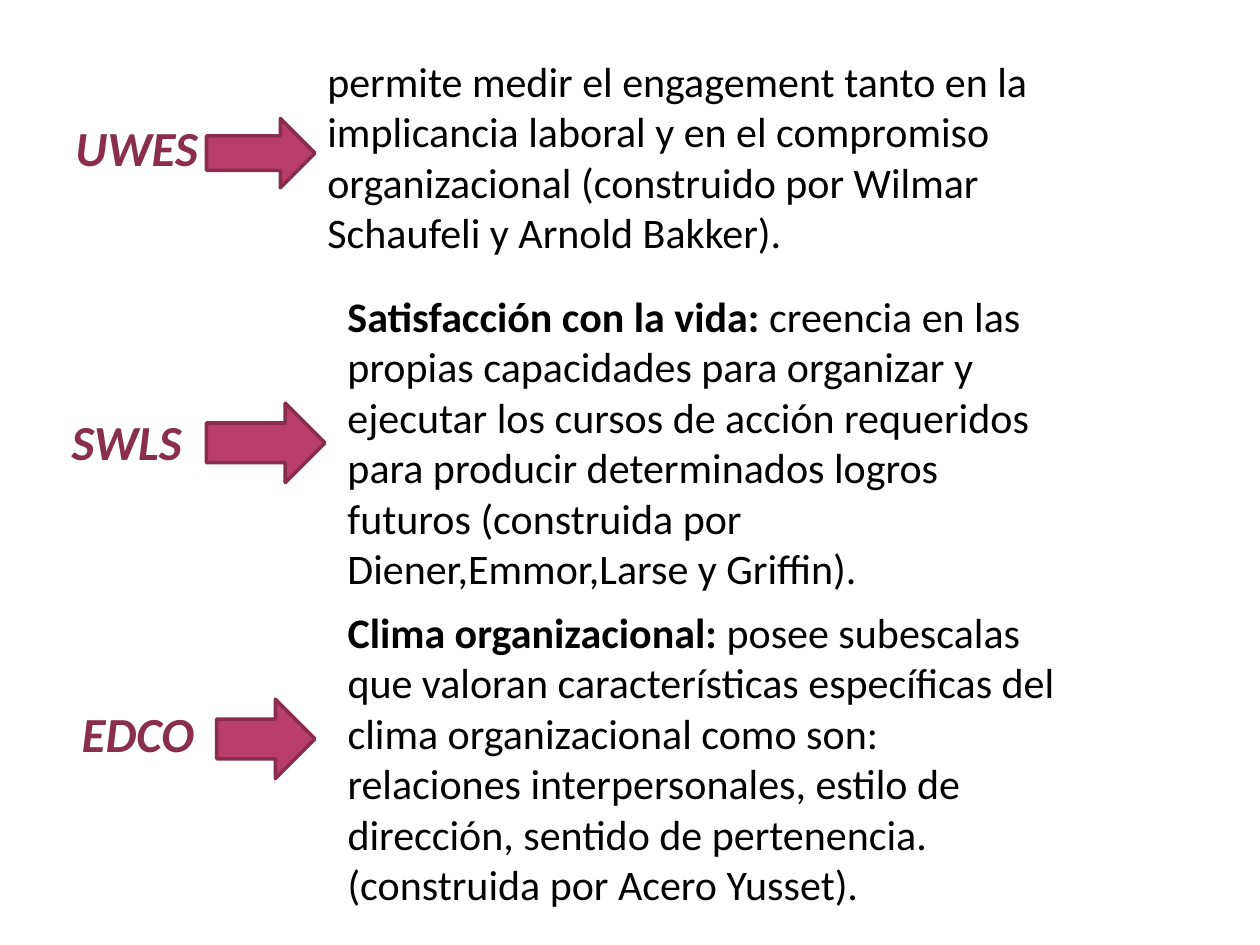
"""Build a slide that describes three measurement scales, each with a label and an arrow."""
from pptx import Presentation
from pptx.dml.color import RGBColor
from pptx.enum.shapes import MSO_SHAPE as SHAPE
from pptx.util import Pt

BLACK = RGBColor(0x00, 0x00, 0x00)
PLUM = RGBColor(0x8A, 0x2E, 0x4E)
ROSE = RGBColor(0xB8, 0x3D, 0x68)
EDGE = RGBColor(0x88, 0x2D, 0x4D)

SCALES = [
    ("UWES", (36, 63.4), (118, 67.7, 62, 39.6), (180, 28, 427.7, 167), "",
     "permite medir el engagement tanto en la implicancia laboral y en el "
     "compromiso organizacional (construido por Wilmar Schaufeli y Arnold Bakker)."),
    ("SWLS", (33.8, 231.5), (118, 230.4, 67.7, 45.4), (191.5, 162.4, 410.4, 182),
     "Satisfacción con la vida: ",
     "creencia en las propias capacidades para organizar y ejecutar los cursos de "
     "acción requeridos para producir determinados logros futuros (construida por "
     "Diener,Emmor,Larse y Griffin)."),
    ("EDCO", (39.6, 398.5), (123.8, 399.6, 56.2, 45.4), (191.5, 343, 422, 182),
     "Clima organizacional: ",
     "posee subescalas que valoran características específicas del clima "
     "organizacional como son: relaciones interpersonales, estilo de dirección, "
     "sentido de pertenencia. (construida por Acero Yusset)."),
]


class Deck:
    def __init__(self):
        self.prs = Presentation()
        self.prs.slide_width, self.prs.slide_height = Pt(720), Pt(540)
        self.s = self.prs.slides.add_slide(self.prs.slide_layouts[6])
        self.font = "Calibri"

    def paragraph(self, box, size, color):
        tf = self.s.shapes.add_textbox(*map(Pt, box)).text_frame
        tf.word_wrap = True
        p = tf.paragraphs[0]
        p.font.name, p.font.size = self.font, Pt(size)
        p.font.color.rgb = color
        return p

    def label(self, text, pos):
        p = self.paragraph((*pos, 96, 41.4), 28, PLUM)
        p.font.bold = p.font.italic = True
        p.add_run().text = text

    def arrow(self, box):
        sp = self.s.shapes.add_shape(SHAPE.RIGHT_ARROW, *map(Pt, box))
        sp.shadow.inherit = False
        sp.fill.solid()
        sp.fill.fore_color.rgb = ROSE
        sp.line.color.rgb = EDGE
        sp.line.width = Pt(2)

    def description(self, box, heading, text):
        p = self.paragraph(box, 24, BLACK)
        if heading:
            r = p.add_run()
            r.text = heading
            r.font.bold = True
        p.add_run().text = text


def main():
    deck = Deck()
    for name, pos, arrow_box, text_box, heading, text in SCALES:
        deck.label(name, pos)
        deck.arrow(arrow_box)
        deck.description(text_box, heading, text)
    deck.prs.save("out.pptx")


if __name__ == "__main__":
    main()
